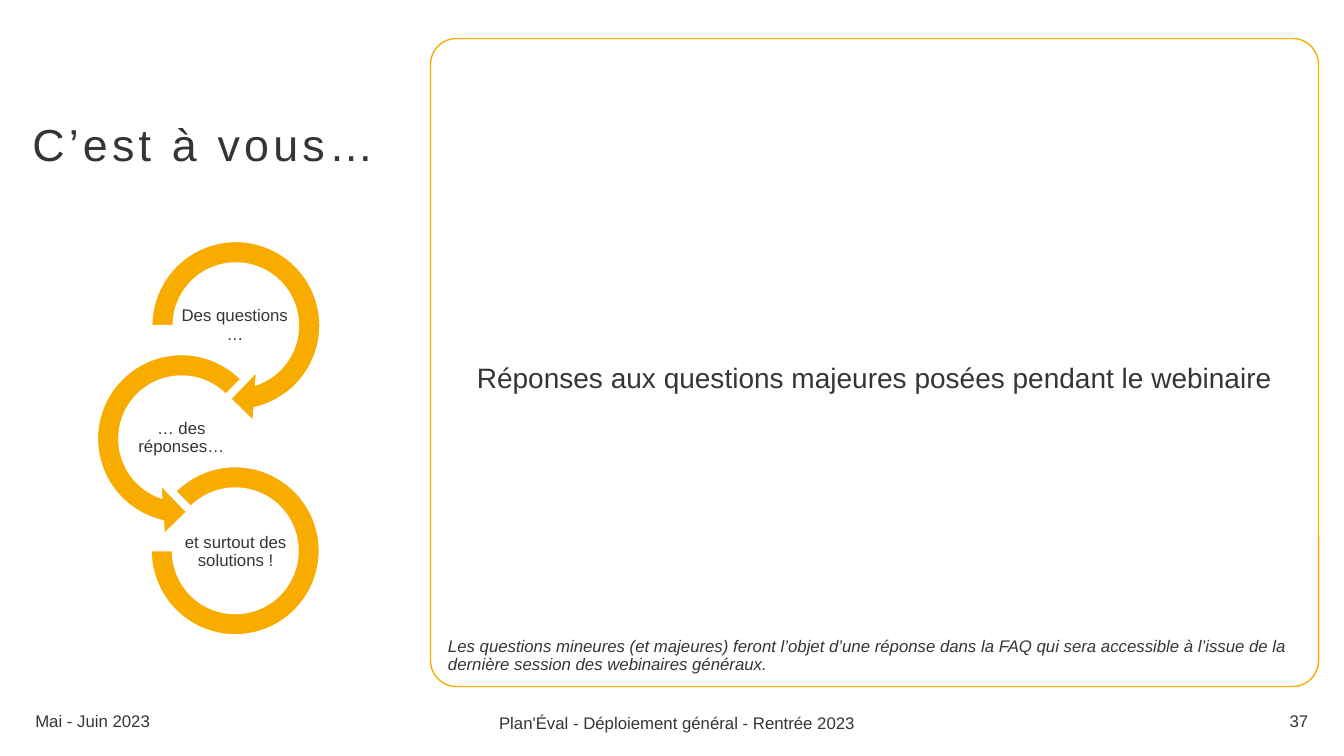
"""Build the closing questions-and-answers slide of the webinar."""
from pptx import Presentation
from pptx import util as u
from pptx.dml.color import RGBColor
from pptx.enum import shapes, text

INK, GOLD, WHITE = "343636", "F8AC00", "FFFFFF"
LEFT, CENTER, RIGHT = text.PP_ALIGN.LEFT, text.PP_ALIGN.CENTER, text.PP_ALIGN.RIGHT


def format_paragraph(paragraph, size, alignment=LEFT, line_spacing=0.9):
    paragraph.alignment = alignment
    paragraph.line_spacing = line_spacing
    paragraph.font.size = u.Pt(size)
    paragraph.font.name = "Arial"
    paragraph.font.color.rgb = RGBColor.from_string(INK)


def paint(shape, fill, line):
    shape.shadow.inherit = False
    shape.fill.solid()
    shape.fill.fore_color.rgb = RGBColor.from_string(fill)
    shape.line.color.rgb = RGBColor.from_string(line)
    shape.line.width = u.Pt(1)


presentation = Presentation()
presentation.slide_width, presentation.slide_height = u.Cm(33.87), u.Cm(19.05)
slide = presentation.slides.add_slide(presentation.slide_layouts[5])

title = slide.shapes.title
title.left, title.top, title.width, title.height = u.Cm(0.56), u.Cm(0.38), u.Cm(9.32), u.Cm(4.06)
title.text_frame.text = "C’est à vous…"
title.text_frame.vertical_anchor = text.MSO_ANCHOR.BOTTOM
title_paragraph = title.text_frame.paragraphs[0]
format_paragraph(title_paragraph, 32)
title_paragraph.runs[0].font._element.set("spc", "300")

footers = [
    ("Mai - Juin 2023", 0.64, 17.65, 7.9, LEFT),
    ("Plan'Éval - Déploiement général - Rentrée 2023", 11.35, 17.7, 11.43, CENTER),
    ("37", 25.6, 17.65, 7.62, RIGHT),
]
for words, left, top, width, alignment in footers:
    footer = slide.shapes.add_textbox(u.Cm(left), u.Cm(top), u.Cm(width), u.Cm(1.02))
    frame = footer.text_frame
    frame.word_wrap = True
    frame.vertical_anchor = text.MSO_ANCHOR.MIDDLE
    frame.text = words
    format_paragraph(frame.paragraphs[0], 12, alignment, 1.0)

panel = slide.shapes.add_shape(
    shapes.MSO_SHAPE.ROUNDED_RECTANGLE, u.Cm(10.85), u.Cm(0.97), u.Cm(22.38), u.Cm(16.33))
panel.adjustments[0] = 0.04
paint(panel, WHITE, GOLD)
frame = panel.text_frame
frame.word_wrap = True
frame.vertical_anchor = text.MSO_ANCHOR.BOTTOM
frame.text = "Réponses aux questions majeures posées pendant le webinaire"
format_paragraph(frame.paragraphs[0], 20, CENTER)
note = frame.add_paragraph()
note.text = ("Les questions mineures (et majeures) feront l’objet d’une réponse dans la FAQ "
             "qui sera accessible à l’issue de la dernière session des webinaires généraux.")
format_paragraph(note, 12)
note.space_before = u.Pt(174)
note.font.italic = True

steps = [
    ("Des questions …", shapes.MSO_SHAPE.CIRCULAR_ARROW, 3.48, 5.74, 4.93,
     (0.11, 11.42, 45, 108, 0.125), 4.55, 7.52),
    ("… des réponses…", shapes.MSO_SHAPE.LEFT_CIRCULAR_ARROW, 2.11, 8.59, 4.93,
     (0.11, 11.42, 63, 189, 0.125), 3.2, 10.36),
    ("et surtout des solutions !", shapes.MSO_SHAPE.BLOCK_ARC, 3.81, 11.76, 4.24,
     (135, 108, 0.127), 4.57, 13.23),
]
cycle = slide.shapes.add_group_shape()
for words, kind, left, top, size, adjustments, label_left, label_top in steps:
    ring = cycle.shapes.add_shape(kind, u.Cm(left), u.Cm(top), u.Cm(size), u.Cm(size))
    for index, value in enumerate(adjustments):
        ring.adjustments[index] = value
    paint(ring, GOLD, WHITE)
    label = cycle.shapes.add_textbox(u.Cm(label_left), u.Cm(label_top), u.Cm(2.74), u.Cm(1.37))
    frame = label.text_frame
    frame.word_wrap = True
    frame.vertical_anchor = text.MSO_ANCHOR.MIDDLE
    frame.margin_left = frame.margin_right = frame.margin_top = frame.margin_bottom = u.Cm(0.02)
    frame.text = words
    format_paragraph(frame.paragraphs[0], 12, CENTER)

presentation.save("out.pptx")
